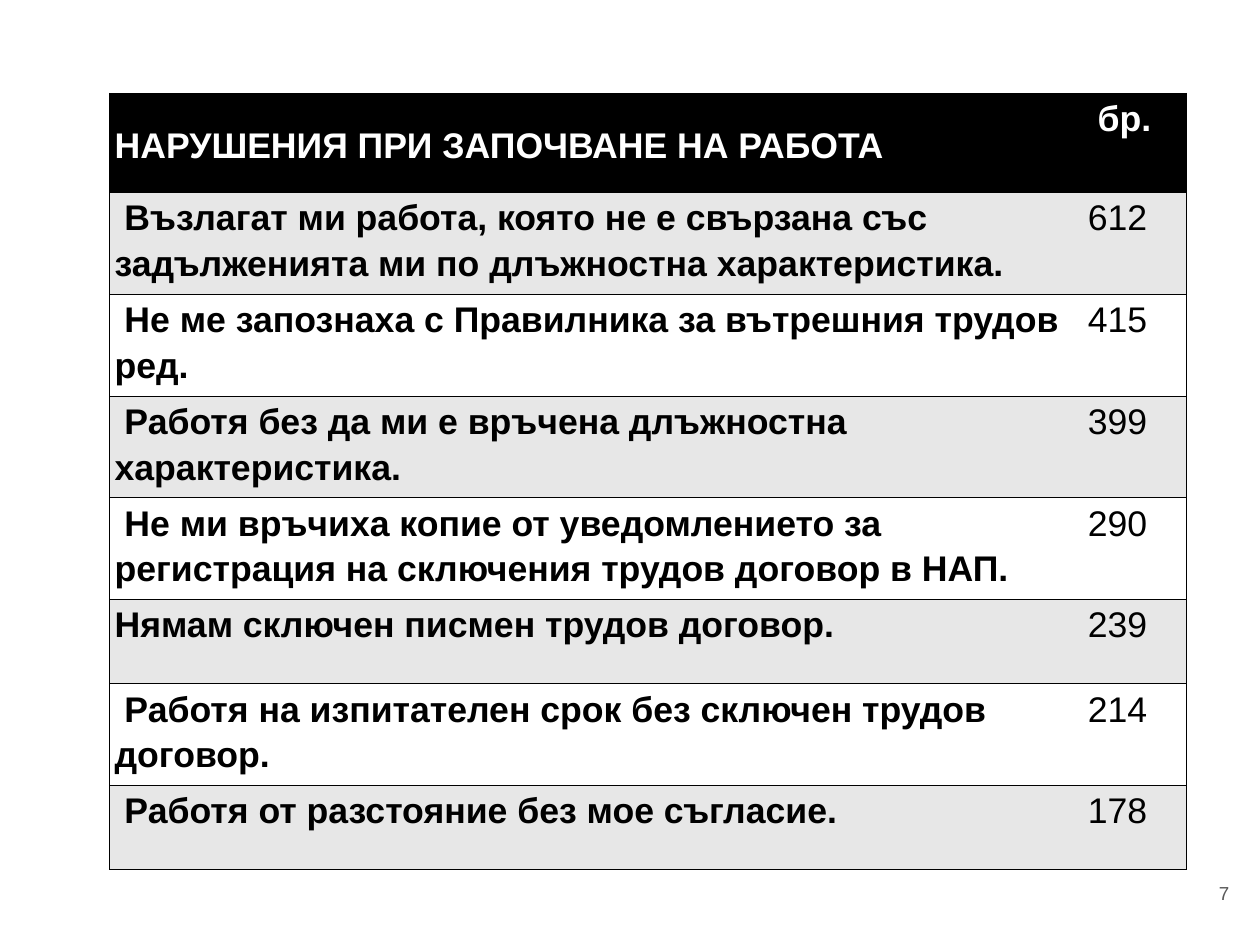
from dataclasses import dataclass

from lxml import etree
from pptx import Presentation
from pptx.dml.color import RGBColor
from pptx.enum import text as t
from pptx.oxml import ns
from pptx.util import Pt

BLACK = RGBColor(0x00, 0x00, 0x00)
WHITE = RGBColor(0xFF, 0xFF, 0xFF)
BAND_GREY = RGBColor(0xE7, 0xE7, 0xE7)
NUMBER_GREY = RGBColor(0x59, 0x59, 0x59)

HEADER_HEIGHT, TALL, SHORT = 100.1, 103, 85
COLUMN_WIDTHS = (983.8, 104.8)
CELL_MARGINS = {"margin_left": Pt(5), "margin_right": Pt(5),
                "margin_top": 0, "margin_bottom": 0}


@dataclass
class Violation:
    wording: str
    count: str
    height: float = TALL


VIOLATIONS = [
    Violation(" Възлагат ми работа, която не е свързана със задълженията ми "
              "по длъжностна характеристика.", "612"),
    Violation(" Не ме запознаха с Правилника за вътрешния трудов ред.", "415"),
    Violation(" Работя без да ми е връчена длъжностна характеристика.", "399"),
    Violation(" Не ми връчиха копие от уведомлението за регистрация на "
              "сключения трудов договор в НАП.", "290"),
    Violation("Нямам сключен писмен трудов договор.", "239", SHORT),
    Violation(" Работя на изпитателен срок без сключен трудов договор.", "214"),
    Violation(" Работя от разстояние без мое съгласие.", "178", SHORT),
]


def set_format(target, values: dict) -> None:
    for name, value in values.items():
        setattr(target, name, value)


def write(paragraph, wording: str, size: float, color: RGBColor, bold: bool) -> None:
    run = paragraph.add_run()
    run.text = wording
    set_format(run.font, {"name": "Arial", "size": Pt(size), "bold": bold})
    run.font.color.rgb = color


def set_borders(cell, drawn_sides: str) -> None:
    """Draw the named sides (of L, R, T, B) in black and hide the others."""
    properties = cell._tc.get_or_add_tcPr()
    for position, side in enumerate("LRTB"):
        line = etree.Element(ns.qn(f"a:ln{side}"), w=str(Pt(1)))
        if side in drawn_sides:
            fill = etree.SubElement(line, ns.qn("a:solidFill"))
            etree.SubElement(fill, ns.qn("a:srgbClr"), val=str(BLACK))
        else:
            etree.SubElement(line, ns.qn("a:noFill"))
        properties.insert(position, line)


def fill_cell(cell, wording: str, fill: RGBColor, color: RGBColor,
              bold: bool, drawn_sides: str) -> None:
    set_format(cell, CELL_MARGINS)
    cell.fill.solid()
    cell.fill.fore_color.rgb = fill
    paragraph = cell.text_frame.paragraphs[0]
    paragraph.line_spacing = 1.15
    write(paragraph, wording, 36, color, bold)
    set_borders(cell, drawn_sides)


def add_violations_table(slide) -> None:
    heights = [HEADER_HEIGHT] + [violation.height for violation in VIOLATIONS]
    table = slide.shapes.add_table(
        len(heights), len(COLUMN_WIDTHS), Pt(110.9), Pt(94.3),
        Pt(sum(COLUMN_WIDTHS)), Pt(sum(heights))).table
    for column, width in zip(table.columns, COLUMN_WIDTHS):
        column.width = Pt(width)
    for row, height in zip(table.rows, heights):
        row.height = Pt(height)

    heading, unit = table.rows[0].cells
    fill_cell(heading, "НАРУШЕНИЯ ПРИ ЗАПОЧВАНЕ НА РАБОТА", BLACK, WHITE, True, "LTB")
    heading.vertical_anchor = t.MSO_ANCHOR.MIDDLE
    fill_cell(unit, " бр.", BLACK, WHITE, True, "RTB")

    for index, violation in enumerate(VIOLATIONS):
        band = WHITE if index % 2 else BAND_GREY
        fill_cell(table.cell(index + 1, 0), violation.wording, band, BLACK, True, "LTB")
        fill_cell(table.cell(index + 1, 1), violation.count, band, BLACK, False, "RTB")


def add_page_number(slide, number: str) -> None:
    frame = slide.shapes.add_textbox(Pt(1180), Pt(866.2), Pt(76.3), Pt(73.4)).text_frame
    inset = Pt(13.7)
    set_format(frame, {"word_wrap": True, "vertical_anchor": t.MSO_ANCHOR.MIDDLE,
                       "margin_left": inset, "margin_right": inset,
                       "margin_top": inset, "margin_bottom": inset})
    frame.paragraphs[0].alignment = t.PP_ALIGN.RIGHT
    write(frame.paragraphs[0], number, 19, NUMBER_GREY, False)


def main() -> None:
    presentation = Presentation()
    set_format(presentation, {"slide_width": Pt(1273.7), "slide_height": Pt(955.4)})
    slide = presentation.slides.add_slide(presentation.slide_layouts[6])
    add_page_number(slide, "7")
    add_violations_table(slide)
    presentation.save("out.pptx")


if __name__ == "__main__":
    main()
